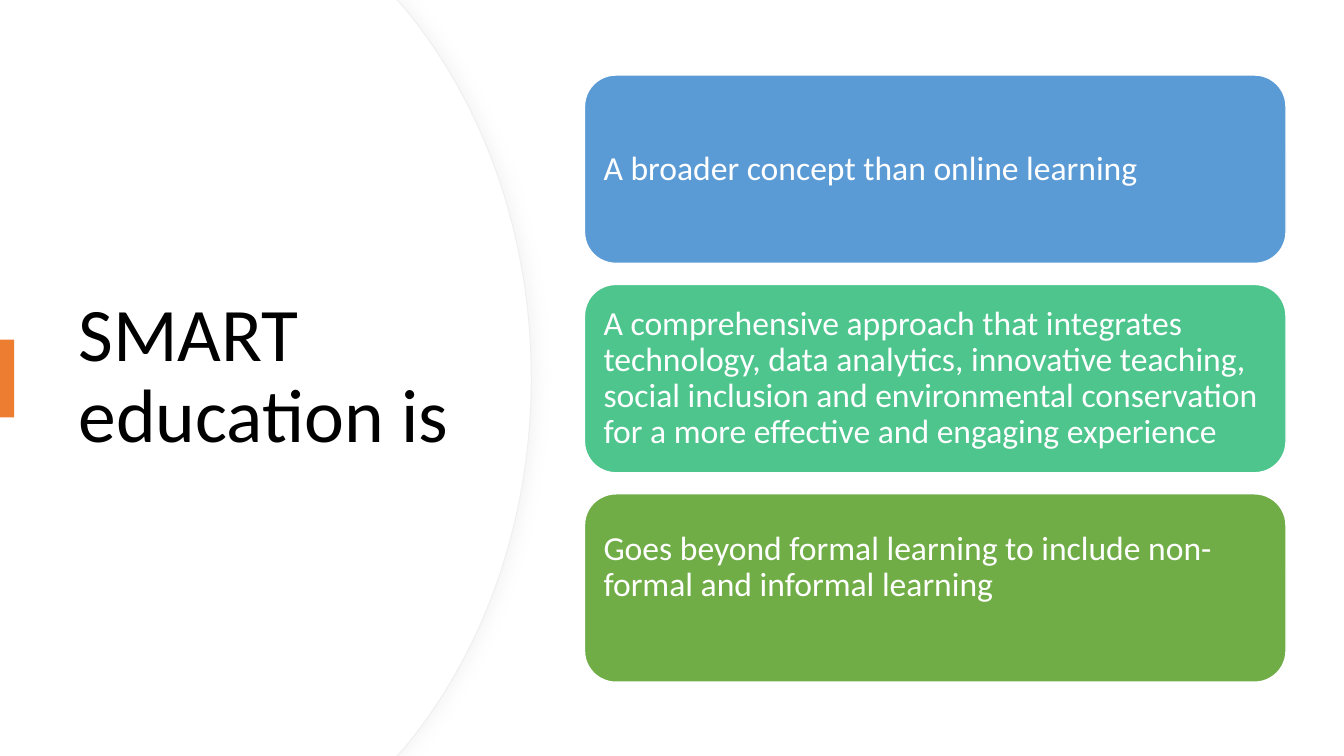
import pptx
import pptx.dml.color
import pptx.enum.shapes
import pptx.enum.text
import pptx.oxml
import pptx.oxml.ns
import pptx.util
from pptx.util import Cm

COLOURS = {
    "white": "FFFFFF", "black": "000000", "edge": "EFEFEF", "shadow": "D9D9D9",
    "orange": "ED7D31", "blue": "5B9BD5", "mint": "4DC58D", "green": "70AD47",
}
CARDS = [
    ("A broader concept than online learning", "blue", 0.25),
    ("A comprehensive approach that integrates technology, data analytics, "
     "innovative teaching, social inclusion and environmental conservation "
     "for a more effective and engaging experience", "mint", 0.25),
    ("Goes beyond formal learning to include non-formal and informal learning",
     "green", 1.27),
]


def colour(name):
    """Return the named palette colour."""
    return pptx.dml.color.RGBColor.from_string(COLOURS[name])


def paint(shape, fill, line=None, width=1):
    """Give a shape a plain fill, an optional outline and no shadow."""
    shape.shadow.inherit = False
    shape.fill.solid()
    shape.fill.fore_color.rgb = colour(fill)
    if line:
        shape.line.color.rgb = colour(line)
        shape.line.width = pptx.util.Pt(width)
    else:
        shape.line.fill.background()


def write(shape, text, size, ink, inset=0.25, bottom=0.13):
    """Write left-aligned, vertically centred text in a shape."""
    frame = shape.text_frame
    frame.word_wrap = True
    frame.auto_size = pptx.enum.text.MSO_AUTO_SIZE.NONE
    frame.vertical_anchor = pptx.enum.text.MSO_ANCHOR.MIDDLE
    frame.margin_left = frame.margin_right = Cm(0.25)
    frame.margin_top, frame.margin_bottom = Cm(inset), Cm(bottom)
    para = frame.paragraphs[0]
    para.alignment = pptx.enum.text.PP_ALIGN.LEFT
    para.line_spacing = 0.9
    span = para.add_run()
    span.text = text
    span.font.name = "Calibri"
    span.font.size = pptx.util.Pt(size)
    span.font.color.rgb = colour(ink)


def bend(segment, controls):
    """Turn a straight outline segment into a cubic curve."""
    curve = pptx.oxml.parse_xml(
        f'<a:cubicBezTo {pptx.oxml.ns.nsdecls("a")}>'
        + "".join(f'<a:pt x="{Cm(x)}" y="{Cm(y)}"/>' for x, y in controls)
        + '</a:cubicBezTo>')
    curve.append(segment[0])
    segment.getparent().replace(segment, curve)


def add_panel(page, width, height):
    """Draw a white panel whose right side bulges outwards."""
    knee, corner = width - 3.2, width - 3.38
    outline = [(corner, 0), (knee, 0.2), (width, height / 2),
               (knee, height - 0.2), (corner, height), (0, height)]
    builder = page.shapes.build_freeform(0, 0)
    builder.add_line_segments([(Cm(x), Cm(y)) for x, y in outline], close=True)
    panel = builder.convert_to_shape()
    segments = list(panel.element.iter(pptx.oxml.ns.qn("a:lnTo")))
    upper = [(width - 1.22, 2.59), (width, 5.89)]
    lower = [(x, height - y) for x, y in reversed(upper)]
    bend(segments[2], upper)
    bend(segments[3], lower)
    return panel


def add_backdrop(page, width, height):
    """Layer a shadowed panel and a plain one."""
    back = add_panel(page, width, height)
    paint(back, "white", "edge", 0.75)
    effects = back.element.spPr.find(pptx.oxml.ns.qn("a:effectLst"))
    effects.append(pptx.oxml.parse_xml(
        f'<a:outerShdw {pptx.oxml.ns.nsdecls("a")} blurRad="{pptx.util.Pt(10)}" '
        f'dist="{pptx.util.Pt(3)}" dir="0" algn="l" rotWithShape="0">'
        f'<a:srgbClr val="{COLOURS["shadow"]}"><a:alpha val="25000"/></a:srgbClr>'
        '</a:outerShdw>'))
    paint(add_panel(page, width - 0.03, height), "white")


def add_heading(page, left, top, width, height):
    """Place the title in front of the backdrop, with its accent bar."""
    title = page.shapes.title
    title.element.getparent().append(title.element)
    title.left, title.top = Cm(left), Cm(top)
    title.width, title.height = Cm(width), Cm(height)
    write(title, "SMART education is", 54, "black", inset=0.13)
    accent = page.shapes.add_shape(
        pptx.enum.shapes.MSO_SHAPE.RECTANGLE, 0, Cm(8.56), Cm(0.36), Cm(1.96))
    paint(accent, "orange")


def add_cards(page, left, top, width, height, gap=0.53):
    """Stack equal rounded cards in the given box."""
    card_height = (height - gap * (len(CARDS) - 1)) / len(CARDS)
    for index, (text, fill, bottom) in enumerate(CARDS):
        card = page.shapes.add_shape(
            pptx.enum.shapes.MSO_SHAPE.ROUNDED_RECTANGLE,
            Cm(left), Cm(top + index * (card_height + gap)),
            Cm(width), Cm(card_height))
        paint(card, fill, "white")
        write(card, text, 24, "white", bottom=bottom)


def main():
    """Build and save the deck."""
    deck = pptx.Presentation()
    deck.slide_width, deck.slide_height = Cm(33.87), Cm(19.05)
    page = deck.slides.add_slide(deck.slide_layouts.get_by_name("Title Only"))
    add_backdrop(page, 13.39, 19.05)
    add_heading(page, 1.73, 3.23, 10.01, 12.57)
    add_cards(page, 14.73, 1.89, 17.68, 15.3)
    deck.save("out.pptx")


if __name__ == "__main__":
    main()
